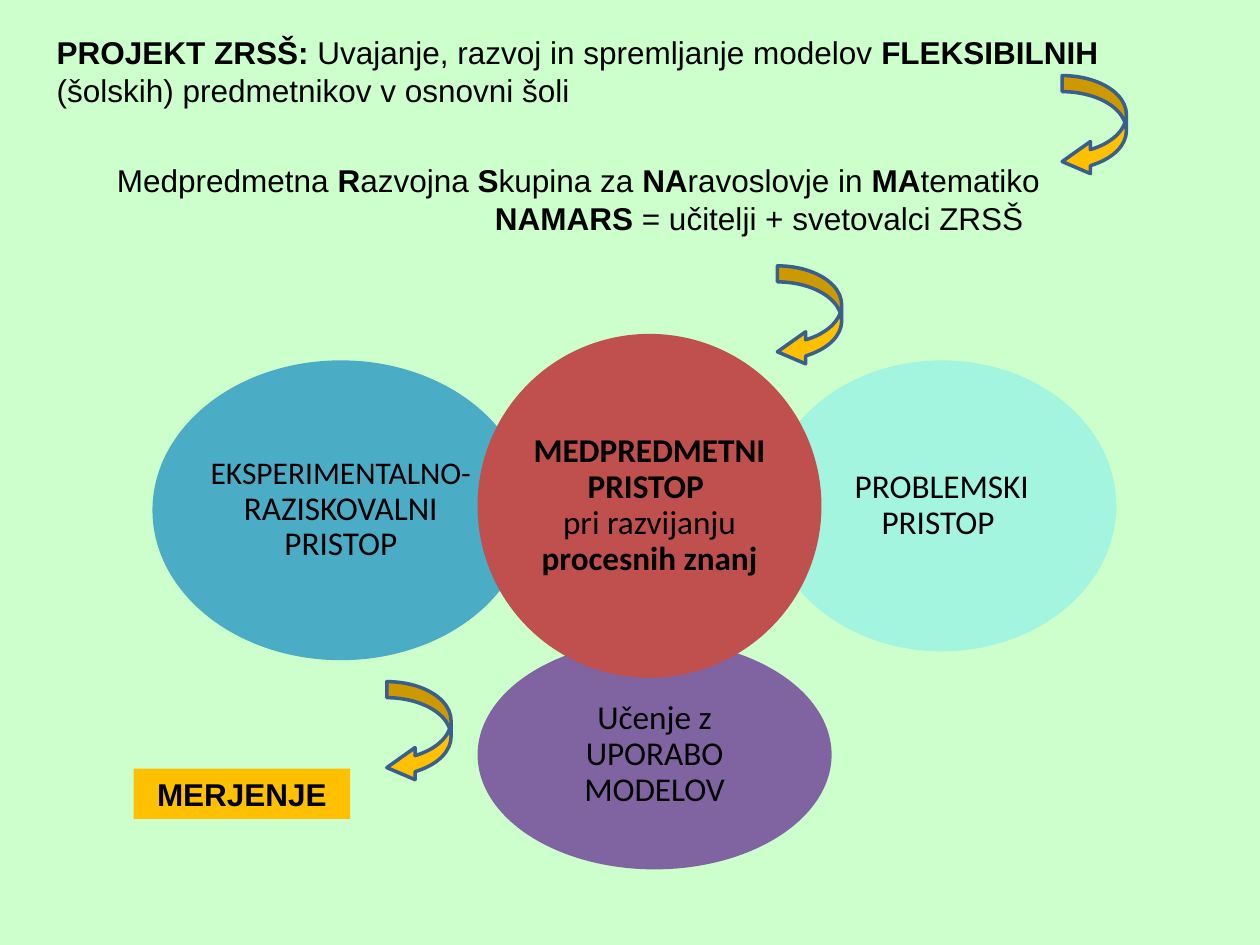
"""Build the slide on the cross-curricular approach of the NAMARS group."""
from lxml import etree
from pptx import Presentation
from pptx.dml.color import RGBColor
from pptx.enum.shapes import MSO_SHAPE
from pptx.enum.text import MSO_ANCHOR, PP_ALIGN
from pptx.oxml.ns import qn
from pptx.util import Inches, Pt

OVAL, RECTANGLE = MSO_SHAPE.OVAL, MSO_SHAPE.RECTANGLE
CURVED_ARROW = MSO_SHAPE.CURVED_LEFT_ARROW
LEFT, CENTER = PP_ALIGN.LEFT, PP_ALIGN.CENTER
TOP, MIDDLE = MSO_ANCHOR.TOP, MSO_ANCHOR.MIDDLE
TITLE_ONLY = 5

COLORS = {
    "background": "CCFFCC",
    "text": "000000",
    "problem": "7EECF2",
    "models": "8064A2",
    "experiment": "4BACC6",
    "center": "C0504D",
    "accent": "FFC000",
    "arrow_line": "3A5F8C",
}

PROJECT = [
    ("PROJEKT ZRSŠ: ", True),
    ("Uvajanje, razvoj in spremljanje modelov ", False),
    ("FLEKSIBILNIH", True),
    (" (šolskih) predmetnikov v osnovni šoli", False),
]
GROUP_NAME = [
    ("Medpredmetna ", False), ("R", True), ("azvojna ", False),
    ("S", True), ("kupina za ", False), ("NA", True),
    ("ravoslovje in ", False), ("MA", True), ("tematiko", False),
]
GROUP_MEMBERS = [("NAMARS", True), (" = učitelji + svetovalci ZRSŠ", False)]

APPROACHES = [
    ("problem", (6.09, 2.86, 2.77, 2.31), 50, [[("PROBLEMSKI PRISTOP ", False)]]),
    ("models", (3.79, 5.08, 2.81, 1.82), 100, [[("Učenje z UPORABO MODELOV", False)]]),
    ("experiment", (1.21, 2.86, 2.99, 2.38), 100,
     [[("EKSPERIMENTALNO-", False, 18), ("RAZISKOVALNI PRISTOP", False)]]),
    ("center", (3.79, 2.65, 2.73, 2.73), 100,
     [[("MEDPREDMETNI PRISTOP ", True)],
      [("pri razvijanju ", False), ("procesnih znanj", True)]]),
]
ARROW_CORNERS = [(8.43, 0.6), (3.07, 5.41), (6.17, 2.11)]


def color(name):
    """Return the named colour."""
    return RGBColor.from_string(COLORS[name])


def place(shape, box):
    """Set position and size in inches."""
    shape.left, shape.top, shape.width, shape.height = map(Inches, box)


def add_runs(paragraph, runs, font="Arial", size=18):
    """Append formatted runs given as text, bold and optional size."""
    for text, bold, *own_size in runs:
        run = paragraph.add_run()
        run.text = text
        run.font.name = font
        run.font.size = Pt(own_size[0] if own_size else size)
        run.font.bold = bold
        run.font.color.rgb = color("text")


def add_filled(slide, kind, box, fill):
    """Add a flat preset shape without outline."""
    shape = slide.shapes.add_shape(kind, *map(Inches, box))
    shape.shadow.inherit = False
    shape.fill.solid()
    shape.fill.fore_color.rgb = color(fill)
    shape.line.fill.background()
    return shape


def set_opacity(shape, percent):
    """Make the solid fill partly transparent."""
    rgb = shape._element.spPr.find(qn("a:solidFill")).find(qn("a:srgbClr"))
    etree.SubElement(rgb, qn("a:alpha")).set("val", str(percent * 1000))


def add_project_title(slide):
    """Fill the title placeholder with the project name."""
    title = slide.shapes.title
    place(title, (0.35, 0.21, 8.86, 0.71))
    title.text_frame.vertical_anchor = TOP
    title.text_frame.word_wrap = True
    paragraph = title.text_frame.paragraphs[0]
    paragraph.alignment = LEFT
    add_runs(paragraph, PROJECT)


def add_group_text(slide):
    """Add the group name with its members indented below."""
    box = slide.shapes.add_textbox(*map(Inches, (0.83, 1.23, 7.56, 0.71)))
    frame = box.text_frame
    frame.word_wrap = True
    add_runs(frame.paragraphs[0], GROUP_NAME)
    members = frame.add_paragraph()
    members._p.get_or_add_pPr().set("marL", str(Inches(3)))
    add_runs(members, GROUP_MEMBERS)


def add_approach(slide, fill, box, opacity, lines):
    """Add one approach as an oval with centred text."""
    oval = add_filled(slide, OVAL, box, fill)
    if opacity < 100:
        set_opacity(oval, opacity)
    frame = oval.text_frame
    frame.word_wrap = True
    frame.vertical_anchor = MIDDLE
    frame.margin_left = frame.margin_right = 0
    frame.margin_top = frame.margin_bottom = 0
    paragraph = frame.paragraphs[0]
    paragraph.alignment = CENTER
    paragraph.line_spacing = 0.9
    for index, runs in enumerate(lines):
        if index:
            paragraph.add_line_break()
        add_runs(paragraph, runs, "Calibri", 19)


def add_measuring_label(slide):
    """Add the measuring label."""
    label = add_filled(slide, RECTANGLE, (1.06, 6.1, 1.72, 0.4), "accent")
    label.text_frame.vertical_anchor = TOP
    paragraph = label.text_frame.paragraphs[0]
    paragraph.alignment = CENTER
    add_runs(paragraph, [("MERJENJE", True)])


def add_curved_arrow(slide, left, top):
    """Add one curved arrow."""
    arrow = add_filled(slide, CURVED_ARROW, (left, top, 0.51, 0.81), "accent")
    arrow.adjustments[2] = 0.44
    arrow.line.color.rgb = color("arrow_line")
    arrow.line.width = Pt(2)


def main():
    """Build and save the presentation."""
    deck = Presentation()
    deck.slide_width, deck.slide_height = Inches(10), Inches(7.5)
    slide = deck.slides.add_slide(deck.slide_layouts[TITLE_ONLY])
    slide.background.fill.solid()
    slide.background.fill.fore_color.rgb = color("background")
    add_group_text(slide)
    add_project_title(slide)
    for approach in APPROACHES:
        add_approach(slide, *approach)
    add_measuring_label(slide)
    for corner in ARROW_CORNERS:
        add_curved_arrow(slide, *corner)
    deck.save("out.pptx")


if __name__ == "__main__":
    main()
